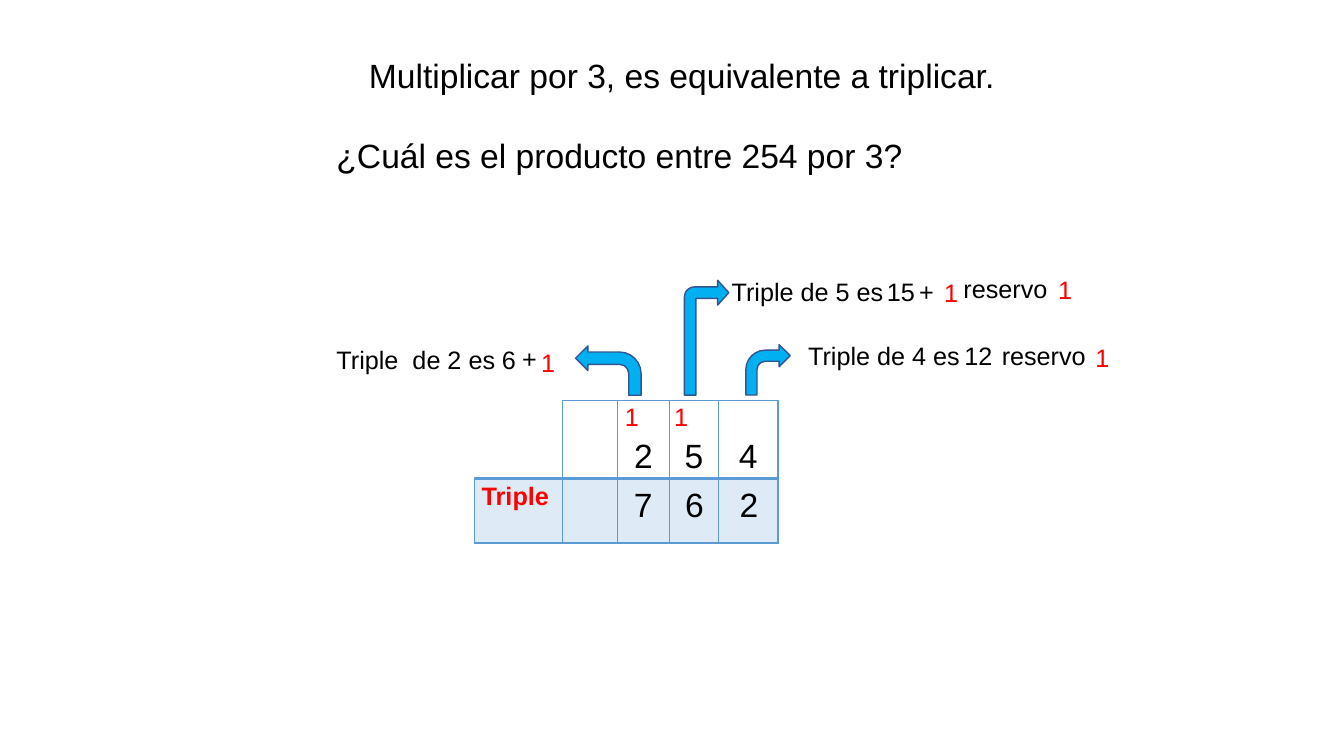
from dataclasses import dataclass

from lxml import etree
from pptx import Presentation
from pptx.dml.color import RGBColor
from pptx.enum.shapes import MSO_SHAPE
from pptx.enum.text import MSO_ANCHOR, MSO_AUTO_SIZE, PP_ALIGN
from pptx.oxml.ns import qn
from pptx.util import Pt

LEFT, CENTER = PP_ALIGN.LEFT, PP_ALIGN.CENTER
TOP = MSO_ANCHOR.TOP
GROW = MSO_AUTO_SIZE.SHAPE_TO_FIT_TEXT
BENT_ARROW = MSO_SHAPE.BENT_ARROW
TITLE_ONLY = 5


@dataclass(frozen=True)
class Theme:
    font: str = "Arial"
    large: int = 24
    normal: int = 18
    ink: str = "000000"
    accent: str = "FF0000"
    arrow_fill: str = "00B0F0"
    arrow_line: str = "325491"
    grid: str = "5B9BD5"
    row_opacity: int = 20


THEME = Theme()
SPACED = {"line_spacing": 1.15, "space_after": Pt(10)}
CARRY_FORMAT = {"alignment": CENTER, **SPACED}

# Table geometry
TABLE_LEFT, TABLE_TOP = 339.1, 285.8
COLUMN_WIDTHS = (62.6, 39.6, 36.7, 35.3, 42.5)
ROW_HEIGHTS = (55, 46)
FACTOR_DIGITS = ("", "", "2", "5", "4")
CARRY_SPACE = 23

# Text, left, top, width
EXPLANATIONS = (
    ("Triple de 5 es", 515.5, 193.7, 128.9),
    ("15", 626.4, 193.7, 42.5),
    ("+", 649.4, 193.7, 21.6),
    ("reservo", 681.1, 191.5, 81.4),
    ("Triple de 4 es", 570.2, 239.8, 128.9),
    ("12", 681.8, 239.8, 39.6),
    ("reservo", 708.5, 239.8, 81.4),
    ("Triple  de 2 es", 233.3, 242.6, 136.8),
    ("6", 351.4, 242.6, 24.5),
    ("+", 365.8, 241.9, 21.6),
)
PRODUCT_DIGITS = (("7", 445.7), ("6", 482.4), ("2", 521.3))
CARRIES = ((439.2, 280.1), (474.5, 280.1), (667.4, 191.5),
           (748.8, 189.4), (775.4, 237.6), (379.4, 241.2))


def apply_format(target, values):
    for name, value in values.items():
        setattr(target, name, value)


def write_text(frame, text, size, color=THEME.ink, bold=False, paragraph_format=None):
    paragraph = frame.paragraphs[0]
    apply_format(paragraph, paragraph_format or {"alignment": LEFT})
    run = paragraph.add_run()
    run.text = text
    apply_format(run.font, {"name": THEME.font, "size": Pt(size), "bold": bold})
    run.font.color.rgb = RGBColor.from_string(color)


def add_title(slide, text, left, top, width, height):
    title = slide.shapes.title
    apply_format(title, {"left": Pt(left), "top": Pt(top),
                         "width": Pt(width), "height": Pt(height)})
    apply_format(title.text_frame, {"word_wrap": False, "auto_size": GROW,
                                    "vertical_anchor": TOP})
    write_text(title.text_frame, text, THEME.large)


def add_text(slide, text, left, top, width, height, size, **style):
    box = slide.shapes.add_textbox(Pt(left), Pt(top), Pt(width), Pt(height))
    apply_format(box.text_frame, {"word_wrap": True, "auto_size": GROW})
    write_text(box.text_frame, text, size, **style)


def add_carry(slide, left, top):
    add_text(slide, "1", left, top, 21.6, 30.2, THEME.normal,
             color=THEME.accent, paragraph_format=CARRY_FORMAT)


def add_arrow(slide, left, top, width, height, adjustments=(), to_left=False):
    arrow = slide.shapes.add_shape(BENT_ARROW, Pt(left), Pt(top), Pt(width), Pt(height))
    arrow.shadow.inherit = False
    arrow.fill.solid()
    arrow.fill.fore_color.rgb = RGBColor.from_string(THEME.arrow_fill)
    arrow.line.color.rgb = RGBColor.from_string(THEME.arrow_line)
    arrow.line.width = Pt(1)
    for index, value in enumerate(adjustments):
        arrow.adjustments[index] = value
    if to_left:
        arrow.rotation = 180
        arrow._element.spPr.find(qn("a:xfrm")).set("flipV", "1")


def set_borders(cell, widths):
    """Draw left, right, top and bottom borders; a width of 0 hides the side."""
    properties = cell._tc.get_or_add_tcPr()
    for index, (side, width) in enumerate(zip("LRTB", widths)):
        line = etree.Element(qn(f"a:ln{side}"), w=str(Pt(width)))
        if width:
            fill = etree.SubElement(line, qn("a:solidFill"))
            etree.SubElement(fill, qn("a:srgbClr"), val=THEME.grid)
        else:
            etree.SubElement(line, qn("a:noFill"))
        properties.insert(index, line)


def tint_cell(cell):
    cell.fill.solid()
    cell.fill.fore_color.rgb = RGBColor.from_string(THEME.grid)
    color = cell._tc.tcPr.find(".//" + qn("a:srgbClr"))
    etree.SubElement(color, qn("a:alpha"), val=str(THEME.row_opacity * 1000))


def fill_cell(cell, text, top_margin=0, **style):
    apply_format(cell, {"margin_left": Pt(5), "margin_right": Pt(5),
                        "margin_top": Pt(top_margin), "margin_bottom": 0})
    write_text(cell.text_frame, text, **style)


def add_product_table(slide):
    frame = slide.shapes.add_table(
        len(ROW_HEIGHTS), len(COLUMN_WIDTHS), Pt(TABLE_LEFT), Pt(TABLE_TOP),
        Pt(sum(COLUMN_WIDTHS)), Pt(sum(ROW_HEIGHTS)))
    table = frame.table
    apply_format(table, {"first_row": False, "horz_banding": False})
    for column, width in zip(table.columns, COLUMN_WIDTHS):
        column.width = Pt(width)
    for row, height in zip(table.rows, ROW_HEIGHTS):
        row.height = Pt(height)

    for column, digit in enumerate(FACTOR_DIGITS):
        factor, product = table.cell(0, column), table.cell(1, column)
        factor.fill.background()
        tint_cell(product)
        outer = 1 if column else 0
        set_borders(factor, (outer, 1, outer, 2))
        set_borders(product, (1, 1, 2, 1))
        if digit:
            fill_cell(factor, digit, CARRY_SPACE, size=THEME.large,
                      paragraph_format=CARRY_FORMAT)
    fill_cell(table.cell(1, 0), "Triple", size=THEME.normal, color=THEME.accent,
              bold=True, paragraph_format=SPACED)


def main():
    presentation = Presentation()
    presentation.slide_width, presentation.slide_height = Pt(960), Pt(540)
    slide = presentation.slides.add_slide(presentation.slide_layouts[TITLE_ONLY])

    # Title and question
    add_title(slide, "Multiplicar por 3, es equivalente a triplicar.",
              256.3, 35.3, 473, 36)
    add_text(slide, "¿Cuál es el producto entre 254 por 3?",
             233.3, 92.9, 432, 36, THEME.large)

    # Table with the digits of the product
    add_product_table(slide)
    for digit, left in PRODUCT_DIGITS:
        add_text(slide, digit, left, 342, 24.5, 36, THEME.large)

    # Arrows from each digit to its explanation
    add_arrow(slide, 488.9, 200.2, 31.7, 82.1, (0.26, 0.28, 0.25, 0.23))
    add_arrow(slide, 411.1, 247, 46.8, 35.3, to_left=True)
    add_arrow(slide, 532.8, 246.2, 31.7, 36)

    # Explanations and carried ones
    for text, left, top, width in EXPLANATIONS:
        add_text(slide, text, left, top, width, 28.8, THEME.normal)
    for left, top in CARRIES:
        add_carry(slide, left, top)

    presentation.save("out.pptx")


if __name__ == "__main__":
    main()
